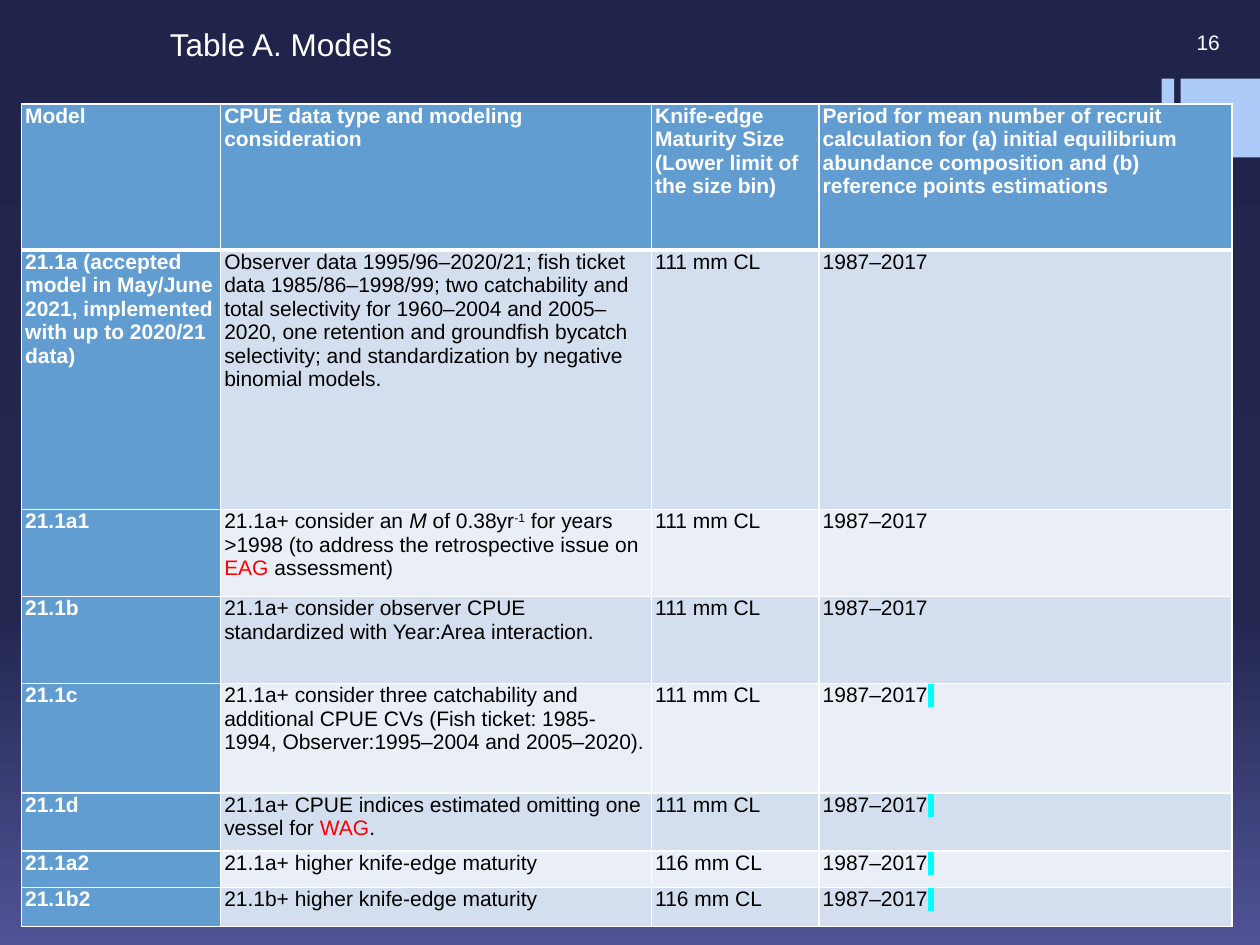
from copy import deepcopy
from dataclasses import dataclass
from typing import Optional

from lxml.etree import SubElement
from pptx import Presentation
from pptx.dml.color import RGBColor
from pptx.enum.shapes import MSO_SHAPE as Shape
from pptx.enum.text import MSO_ANCHOR as Anchor, PP_ALIGN as Align
from pptx.oxml.ns import qn
from pptx.util import Inches, Pt

WIDTH, HEIGHT = 10, 7.5
WHITE, BLACK, RED = "FFFFFF", "000000", "FF0000"
ACCENT, HEADER_BLUE, HIGHLIGHT = "ACCBF9", "629DD1", "00FFFF"
BANDS = ("D3DFEE", "EAEFF7")
BACKGROUND_STOPS = ((0, "21244A"), (0.65, "232750"), (1, "4F5395"))
COLUMN_WIDTHS = (1.58, 3.42, 1.33, 3.28)
ROW_HEIGHTS = (1.16, 2.06, 0.69, 0.69, 0.87, 0.46, 0.29, 0.31)


@dataclass(frozen=True)
class Box:
    """A place on the slide, in shares of its width and height."""
    left: float
    top: float
    width: float
    height: float

    def lengths(self) -> tuple:
        return (Inches(self.left * WIDTH), Inches(self.top * HEIGHT),
                Inches(self.width * WIDTH), Inches(self.height * HEIGHT))


@dataclass(frozen=True)
class Span:
    text: str
    color: Optional[str] = None
    italic: bool = False
    superscript: bool = False
    highlight: Optional[str] = None


@dataclass(frozen=True)
class ModelRow:
    name: str
    consideration: tuple
    maturity: str = "111 mm CL"
    marked: bool = False

    def cells(self) -> tuple:
        period = (Span("1987–2017"),)
        if self.marked:
            period += (Span(" ", highlight=HIGHLIGHT),)
        return (Span(self.name),), self.consideration, (Span(self.maturity),), period


HEADERS = (
    "Model",
    "CPUE data type and modeling consideration",
    "Knife-edge Maturity Size\n(Lower limit of the size bin)",
    "Period for mean number of recruit calculation for (a) initial equilibrium "
    "abundance composition and (b) reference points estimations",
)
MODELS = (
    ModelRow("21.1a (accepted model in May/June 2021, implemented with up to 2020/21 data)",
             (Span("Observer data 1995/96–2020/21; fish ticket data 1985/86–1998/99; two "
                   "catchability and total selectivity for 1960–2004 and 2005–2020, one "
                   "retention and groundfish bycatch selectivity; and standardization by "
                   "negative binomial models."),)),
    ModelRow("21.1a1",
             (Span("21.1a+ consider an "), Span("M", italic=True), Span(" of 0.38yr"),
              Span("-1", superscript=True),
              Span(" for years >1998 (to address the retrospective issue on "),
              Span("EAG", RED), Span(" assessment)"))),
    ModelRow("21.1b", (Span("21.1a+ consider observer CPUE standardized with "
                            "Year:Area interaction."),)),
    ModelRow("21.1c", (Span("21.1a+ consider three catchability and additional CPUE CVs (Fish "
                            "ticket: 1985-1994, Observer:1995–2004 and 2005–2020)."),),
             marked=True),
    ModelRow("21.1d", (Span("21.1a+ CPUE indices estimated omitting one vessel for "),
                       Span("WAG", RED), Span(".")), marked=True),
    ModelRow("21.1a2", (Span("21.1a+ higher knife-edge maturity"),), "116 mm CL", True),
    ModelRow("21.1b2", (Span("21.1b+ higher knife-edge maturity"),), "116 mm CL", True),
)


def rgb(color: str) -> RGBColor:
    return RGBColor.from_string(color)


def format_run(run, size: float, color: str, bold: bool = False) -> None:
    font = run.font
    font.name, font.size, font.bold = "Arial", Pt(size), bold
    font.color.rgb = rgb(color)


def highlight_run(run, color: str) -> None:
    properties = run.font._element
    highlight = SubElement(properties, qn("a:highlight"))
    SubElement(highlight, qn("a:srgbClr"), val=color)
    properties.find(qn("a:latin")).addprevious(highlight)


def paint_background(slide) -> None:
    fill = slide.background.fill
    fill.gradient()
    fill.gradient_angle = 270
    stop_list = next(slide.element.iter(qn("a:gsLst")))
    stop_list.append(deepcopy(stop_list[-1]))
    for stop, (position, color) in zip(fill.gradient_stops, BACKGROUND_STOPS):
        stop.position = position
        stop.color.rgb = rgb(color)


def add_block(slide, box: Box) -> None:
    shape = slide.shapes.add_shape(Shape.RECTANGLE, *box.lengths())
    shape.shadow.inherit = False
    shape.fill.solid()
    shape.fill.fore_color.rgb = rgb(ACCENT)
    shape.line.fill.background()


def add_label(slide, box: Box, text: str, size: float, align: Align, anchor: Anchor) -> None:
    text_frame = slide.shapes.add_textbox(*box.lengths()).text_frame
    text_frame.word_wrap = True
    text_frame.vertical_anchor = anchor
    text_frame.text = text
    paragraph = text_frame.paragraphs[0]
    paragraph.alignment = align
    format_run(paragraph.runs[0], size, WHITE)


def set_borders(cell, top: float, bottom: float) -> None:
    properties = cell._tc.get_or_add_tcPr()
    widths = {"a:lnL": 1, "a:lnR": 1, "a:lnT": top, "a:lnB": bottom}
    for index, (tag, width) in enumerate(widths.items()):
        line = SubElement(properties, qn(tag), w=str(Pt(width)))
        SubElement(SubElement(line, qn("a:solidFill")), qn("a:srgbClr"), val=WHITE)
        properties.insert(index, line)


def fill_cell(cell, spans: tuple, fill: str, color: str, bold: bool) -> None:
    cell.margin_left = cell.margin_right = Inches(0.03)
    cell.margin_top = cell.margin_bottom = 0
    cell.fill.solid()
    cell.fill.fore_color.rgb = rgb(fill)
    text_frame = cell.text_frame
    text_frame.text = spans[0].text
    for span in spans[1:]:
        text_frame.paragraphs[0].add_run().text = span.text
    for paragraph in text_frame.paragraphs:
        for run in paragraph.runs:
            format_run(run, 12, color, bold)
    if len(spans) > 1:
        for run, span in zip(text_frame.paragraphs[0].runs, spans):
            run.font.italic = span.italic
            if span.color:
                run.font.color.rgb = rgb(span.color)
            if span.superscript:
                run.font._element.set("baseline", "30000")
            if span.highlight:
                highlight_run(run, span.highlight)


def add_model_table(slide, box: Box) -> None:
    rows = [tuple((Span(header),) for header in HEADERS)]
    rows += [model.cells() for model in MODELS]
    table = slide.shapes.add_table(len(rows), len(HEADERS), *box.lengths()).table
    for column, width in zip(table.columns, COLUMN_WIDTHS):
        column.width = Inches(width)
    for row, height in zip(table.rows, ROW_HEIGHTS):
        row.height = Inches(height)
    for row_index, row in enumerate(rows):
        for column_index, spans in enumerate(row):
            cell = table.cell(row_index, column_index)
            heading = row_index == 0 or column_index == 0
            fill = HEADER_BLUE if heading else BANDS[(row_index - 1) % 2]
            fill_cell(cell, spans, fill, WHITE if heading else BLACK, heading)
            set_borders(cell, 3 if row_index == 1 else 1, 3 if row_index == 0 else 1)


def main() -> None:
    presentation = Presentation()
    presentation.slide_width, presentation.slide_height = Inches(WIDTH), Inches(HEIGHT)
    slide = presentation.slides.add_slide(presentation.slide_layouts[6])
    paint_background(slide)
    add_block(slide, Box(0.922, 1 / 12, 0.01, 1 / 12))
    add_block(slide, Box(0.937, 1 / 12, 0.063, 1 / 12))
    add_label(slide, Box(0.875, 0.02, 0.103, 0.05), "16", 12, Align.RIGHT, Anchor.MIDDLE)
    add_label(slide, Box(0.125, 0.02, 0.675, 0.05), "Table A. Models", 18, Align.LEFT, Anchor.TOP)
    add_model_table(slide, Box(0.017, 0.11, 0.961, 0.87))
    presentation.save("out.pptx")


if __name__ == "__main__":
    main()
